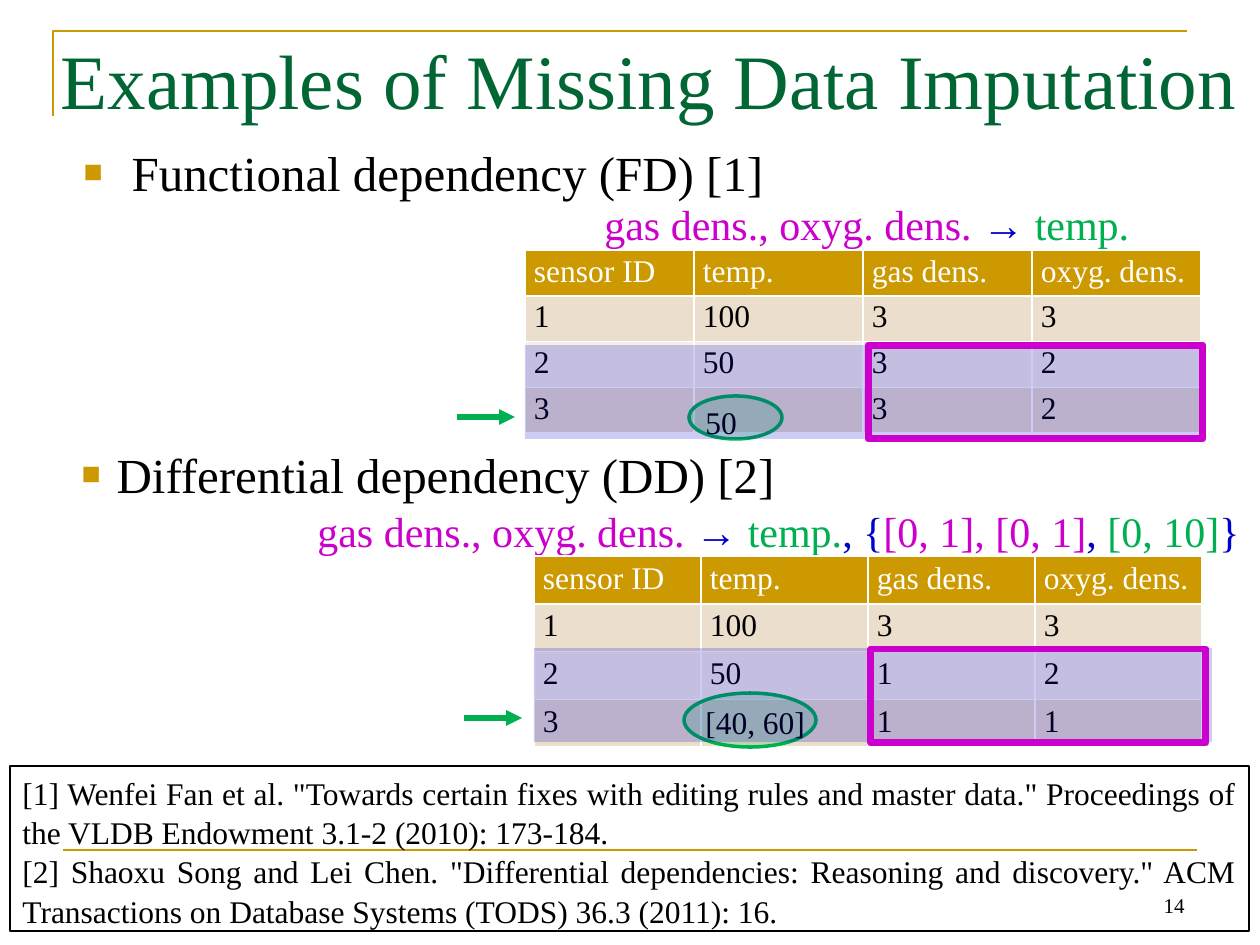
from lxml.etree import SubElement
from pptx import Presentation
from pptx.dml.color import RGBColor
from pptx.enum.shapes import MSO_CONNECTOR, MSO_SHAPE
from pptx.enum.text import MSO_ANCHOR, PP_ALIGN
from pptx.oxml.ns import qn
from pptx.util import Pt

EMU_PER_PX = 914400 / 126
FONT = "Times New Roman"
GOLD, GREEN, MAGENTA, BLUE = "CC9900", "00B050", "CC00CC", "0000CC"
BLACK, WHITE, TITLE_GREEN = "000000", "FFFFFF", "006633"
BAND_FILLS = [GOLD, "ECDECC", "F6EFE7", "ECDECC"]
HEADER = ["sensor ID", "temp.", "gas dens.", "oxyg. dens."]


def px(length):
    return round(length * EMU_PER_PX)


def box(*lengths):
    return [px(length) for length in lengths]


def color(hex_code):
    return RGBColor.from_string(hex_code)


def format_run(run, size, hex_code):
    run.font.name = FONT
    run.font.size = Pt(size)
    run.font.bold = False
    run.font.color.rgb = color(hex_code)


def format_frame(frame, size, hex_code):
    frame.word_wrap = True
    for paragraph in frame.paragraphs:
        for run in paragraph.runs:
            format_run(run, size, hex_code)


def place(shape, left, top, width, height):
    shape.left, shape.top, shape.width, shape.height = box(left, top, width, height)


def add_label(slide, at, text, size):
    label = slide.shapes.add_textbox(*box(*at))
    label.text_frame.text = text
    format_frame(label.text_frame, size, BLACK)
    return label.text_frame


def add_formula(slide, at, parts):
    frame = slide.shapes.add_textbox(*box(*at)).text_frame
    frame.word_wrap = True
    for text, hex_code in parts:
        run = frame.paragraphs[0].add_run()
        run.text = text
        format_run(run, 24, hex_code)


def set_bullet(placeholder, at, text, indent):
    place(placeholder, *at)
    placeholder.text_frame.text = text
    format_frame(placeholder.text_frame, 28, BLACK)
    properties = placeholder.text_frame.paragraphs[0]._p.get_or_add_pPr()
    properties.set("marL", str(px(indent)))
    properties.set("indent", str(-px(indent)))
    bullet_color = SubElement(properties, qn("a:buClr"))
    SubElement(bullet_color, qn("a:srgbClr"), val=GOLD)
    SubElement(properties, qn("a:buSzPct"), val="65000")
    SubElement(properties, qn("a:buFont"), typeface="Arial")
    SubElement(properties, qn("a:buChar"), char="■")


def add_line(slide, start, end, hex_code, width, arrow=False):
    line = slide.shapes.add_connector(MSO_CONNECTOR.STRAIGHT, *box(*start, *end))
    line.line.color.rgb = color(hex_code)
    line.line.width = Pt(width)
    if arrow:
        SubElement(line.line._get_or_add_ln(), qn("a:tailEnd"), type="triangle")
    SubElement(line._element.spPr, qn("a:effectLst"))


def add_mark(slide, kind, at, fill=None, outline=None, width=1):
    """Add a shape with an optional 20 % fill and an optional outline."""
    mark = slide.shapes.add_shape(kind, *box(*at))
    mark.shadow.inherit = False
    if fill:
        mark.fill.solid()
        mark.fill.fore_color.rgb = color(fill)
        fill_color = mark._element.spPr.find(".//" + qn("a:srgbClr"))
        SubElement(fill_color, qn("a:alpha"), val="20000")
    else:
        mark.fill.background()
    if outline:
        mark.line.color.rgb = color(outline)
        mark.line.width = Pt(width)
    else:
        mark.line.fill.background()
    return mark


def add_sensor_table(slide, left, top, column_width, row_height, margin, readings):
    rows = [HEADER, *readings]
    table = slide.shapes.add_table(
        len(rows), len(HEADER),
        *box(left, top, column_width * len(HEADER), row_height * len(rows))).table
    for column in table.columns:
        column.width = px(column_width)
    for r, values in enumerate(rows):
        table.rows[r].height = px(row_height)
        for c, value in enumerate(values):
            cell = table.cell(r, c)
            cell.margin_left = cell.margin_right = px(9)
            cell.margin_top = cell.margin_bottom = px(margin)
            cell.fill.solid()
            cell.fill.fore_color.rgb = color(BAND_FILLS[r])
            if value:
                cell.text_frame.text = value
                format_run(cell.text_frame.paragraphs[0].runs[0], 18,
                           BLACK if r else WHITE)
            else:
                SubElement(cell.text_frame.paragraphs[0]._p,
                           qn("a:endParaRPr"), sz="1200")


def add_imputation(slide, arrow_start, ellipse_at, value_at, value, tint_at, frame_at):
    """Point at the incomplete row, fill in its value and mark the matching rows."""
    left, top = arrow_start
    add_line(slide, arrow_start, (left + 58, top), GREEN, 3, arrow=True)
    add_mark(slide, MSO_SHAPE.OVAL, ellipse_at, GREEN, GREEN, 2)
    add_label(slide, value_at, value, 18)
    add_mark(slide, MSO_SHAPE.RECTANGLE, tint_at, fill=BLUE)
    add_mark(slide, MSO_SHAPE.RECTANGLE, frame_at, outline=MAGENTA, width=4)


def add_references(slide):
    references = add_mark(slide, MSO_SHAPE.RECTANGLE, (10, 766, 1239, 165),
                          outline=BLACK, width=0.75).text_frame
    references.text = (
        '[1] Wenfei Fan et al. "Towards certain fixes with editing rules and master '
        'data." Proceedings of the VLDB Endowment 3.1-2 (2010): 173-184.\n'
        '[2] Shaoxu Song and Lei Chen. "Differential dependencies: Reasoning and '
        'discovery." ACM Transactions on Database Systems (TODS) 36.3 (2011): 16.')
    references.vertical_anchor = MSO_ANCHOR.TOP
    format_frame(references, 18, BLACK)
    for paragraph in references.paragraphs:
        paragraph.alignment = PP_ALIGN.JUSTIFY
        paragraph.line_spacing = 1.04


def main():
    deck = Presentation()
    deck.slide_width, deck.slide_height = box(1260, 945)
    slide = deck.slides.add_slide(deck.slide_layouts[3])
    title, fd_heading, dd_heading = list(slide.placeholders)[:3]

    # Gold corner and bottom rule
    builder = slide.shapes.build_freeform(px(53), px(116))
    builder.add_line_segments([box(53, 31), box(1187, 31)], close=False)
    corner = builder.convert_to_shape()
    corner.shadow.inherit = False
    corner.fill.background()
    corner.line.color.rgb = color(GOLD)
    corner.line.width = Pt(1.5)
    add_line(slide, (63, 850), (1197, 850), GOLD, 1.5)

    # Title
    place(title, 48, 18, 1212, 158)
    title.text_frame.text = "Examples of Missing Data Imputation"
    title.text_frame.vertical_anchor = MSO_ANCHOR.TOP
    title.text_frame.margin_top = px(15)
    title.text_frame.paragraphs[0].alignment = PP_ALIGN.LEFT
    format_frame(title.text_frame, 44, TITLE_GREEN)

    # Functional dependency
    dependency = [("gas dens., oxyg. dens. ", MAGENTA), ("→ ", BLUE), ("temp.", GREEN)]
    set_bullet(fd_heading, (71, 136, 1134, 79), "Functional dependency (FD) [1]", 48)
    add_formula(slide, (592, 192, 555, 63), dependency)
    add_sensor_table(slide, 525, 250, 169, 44, 4, [
        ["1", "100", "3", "3"], ["2", "50", "3", "2"], ["3", "", "3", "2"]])
    add_imputation(slide, (457, 417), (689, 396, 93, 43), (693, 397, 57, 50), "50",
                   (525, 345, 678, 94), (868, 345, 335, 94))

    # Differential dependency
    set_bullet(dd_heading, (69, 438, 1134, 79), "Differential dependency (DD) [2]", 35)
    add_formula(slide, (305, 499, 955, 63), dependency + [
        (", {", BLUE), ("[0, 1], [0, 1]", MAGENTA), (", ", BLUE),
        ("[0, 10]", GREEN), ("}", BLUE)])
    add_sensor_table(slide, 534, 556, 167, 47, 5, [
        ["1", "100", "3", "3"], ["2", "50", "1", "2"], ["3", "", "1", "1"]])
    add_imputation(slide, (464, 718), (684, 693, 132, 54), (693, 697, 126, 50),
                   "[40, 60]", (534, 648, 678, 94), (871, 649, 335, 94))

    # References and page number
    add_references(slide)
    page_number = add_label(slide, (903, 861, 294, 63), "14", 12)
    page_number.vertical_anchor = MSO_ANCHOR.BOTTOM
    page_number.paragraphs[0].alignment = PP_ALIGN.RIGHT

    deck.save("out.pptx")


if __name__ == "__main__":
    main()
